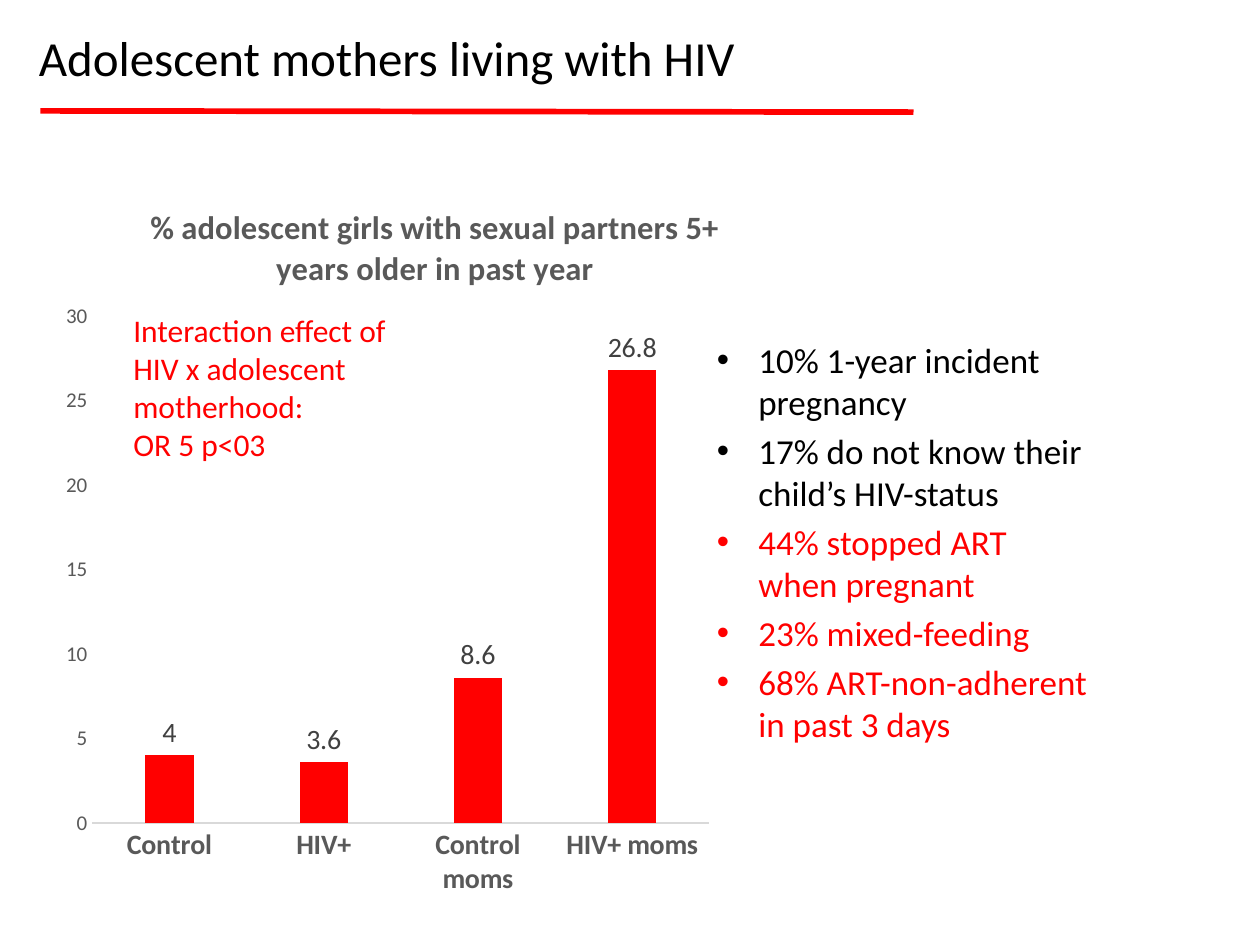
from dataclasses import dataclass

from lxml import etree
from pptx import Presentation
from pptx import util as u
from pptx.chart.data import CategoryChartData
from pptx.dml.color import RGBColor
from pptx.enum import chart as ch
from pptx.enum import shapes
from pptx.oxml import parse_xml
from pptx.oxml.ns import nsdecls, qn

RED = RGBColor(0xFF, 0x00, 0x00)
BLACK = RGBColor(0x00, 0x00, 0x00)
GREY = RGBColor(0x59, 0x59, 0x59)
DARK = RGBColor(0x40, 0x40, 0x40)
PALE = RGBColor(0xD9, 0xD9, 0xD9)
FACE = "Calibri"


@dataclass
class Line:
    text: str
    color: RGBColor = RED


@dataclass
class Block:
    box: tuple
    size: int
    lines: list
    bullet: bool = False


BLOCKS = [
    Block((0.21, 0.17, 7.71, 0.57), 28, [Line("Adolescent mothers living with HIV", BLACK)]),
    Block((0.96, 2.42, 2.27, 1.31), 18, [
        Line("Interaction effect of HIV x adolescent motherhood:"),
        Line("OR 5 p<03"),
    ]),
    Block((5.59, 2.64, 3.32, 4.28), 20, [
        Line("10% 1-year incident pregnancy", BLACK),
        Line("17% do not know their child’s HIV-status", BLACK),
        Line("44% stopped ART\vwhen pregnant"),
        Line("23% mixed-feeding"),
        Line("68% ART-non-adherent\vin past 3 days"),
    ], bullet=True),
]


def style(font, size: float, color: RGBColor, bold: bool = False) -> None:
    font.name, font.size, font.bold = FACE, u.Pt(size), bold
    font.color.rgb = color


def add_bullet(para) -> None:
    para.space_before = u.Pt(4)
    props = para._p.get_or_add_pPr()
    props.set("marL", str(u.Inches(0.33)))
    props.set("indent", str(u.Inches(-0.33)))
    etree.SubElement(props, qn("a:buFont")).set("typeface", "Arial")
    etree.SubElement(props, qn("a:buChar")).set("char", "•")


def add_block(slide, block: Block) -> None:
    frame = slide.shapes.add_textbox(*map(u.Inches, block.box)).text_frame
    frame.word_wrap = True
    for i, line in enumerate(block.lines):
        para = frame.add_paragraph() if i else frame.paragraphs[0]
        para.text = line.text
        style(para.font, block.size, line.color)
        if block.bullet:
            add_bullet(para)


def add_rule(slide) -> None:
    ends = map(u.Inches, (0.32, 0.88, 7.25, 0.89))
    rule = slide.shapes.add_connector(shapes.MSO_CONNECTOR.STRAIGHT, *ends)
    rule.line.color.rgb = RED
    rule.line.width = u.Pt(3.25)
    etree.SubElement(rule._element.spPr, qn("a:effectLst"))


def layout(inner: bool, **place: float):
    target = '<c:layoutTarget val="inner"/>' if inner else ""
    modes = "".join(f'<c:{key}Mode val="edge"/>' for key in "xy")
    sizes = "".join(f'<c:{key} val="{val}"/>' for key, val in place.items())
    return parse_xml(
        f'<c:layout {nsdecls("c")}><c:manualLayout>{target}{modes}{sizes}'
        "</c:manualLayout></c:layout>"
    )


def add_chart(slide) -> None:
    data = CategoryChartData()
    data.categories = ["Control", "HIV+", "Control moms", "HIV+ moms"]
    data.add_series("Series 1", (4, 3.6, 8.6, 26.8))
    box = map(u.Inches, (0.32, 1.46, 5.9, 5.83))
    chart = slide.shapes.add_chart(ch.XL_CHART_TYPE.COLUMN_CLUSTERED, *box, data).chart
    style(chart.font, 10, BLACK)
    chart.has_legend = False

    chart.has_title = True
    title = chart.chart_title
    para = title.text_frame.paragraphs[0]
    para.text = "% adolescent girls with sexual partners 5+ years older in past year"
    style(para.font, 18.6, GREY, True)
    title.include_in_layout = False
    for old in title._element.findall(qn("c:layout")):
        title._element.remove(old)
    title._element.find(qn("c:tx")).addnext(layout(False, x=0.14, y=0.02))

    area = chart._chartSpace.chart.plotArea
    for old in area.findall(qn("c:layout")):
        area.remove(old)
    area.insert(0, layout(True, x=0.07, y=0.18, w=0.83, h=0.69))

    cats, vals = chart.category_axis, chart.value_axis
    for axis, size, bold in ((cats, 16, True), (vals, 12, False)):
        style(axis.tick_labels.font, size, GREY, bold)
        axis.major_tick_mark = axis.minor_tick_mark = ch.XL_TICK_MARK.NONE
        axis.has_major_gridlines = False
    cats.format.line.color.rgb = PALE
    cats.format.line.width = u.Pt(0.75)
    vals.format.line.fill.background()
    vals.minimum_scale, vals.maximum_scale, vals.major_unit = 0, 30, 5

    plot = chart.plots[0]
    plot.gap_width, plot.overlap, plot.vary_by_categories = 219, -27, False
    bars = plot.series[0]
    bars.format.fill.solid()
    bars.format.fill.fore_color.rgb = RED
    labels = bars.data_labels
    labels.show_value = True
    labels.position = ch.XL_LABEL_POSITION.OUTSIDE_END
    style(labels.font, 16, DARK)


def main() -> None:
    """Build the slide on adolescent mothers living with HIV."""
    deck = Presentation()
    deck.slide_width, deck.slide_height = u.Inches(10), u.Inches(7.5)
    slide = deck.slides.add_slide(deck.slide_layouts[6])
    add_rule(slide)
    add_chart(slide)
    for block in BLOCKS:
        add_block(slide, block)
    deck.save("out.pptx")


if __name__ == "__main__":
    main()
